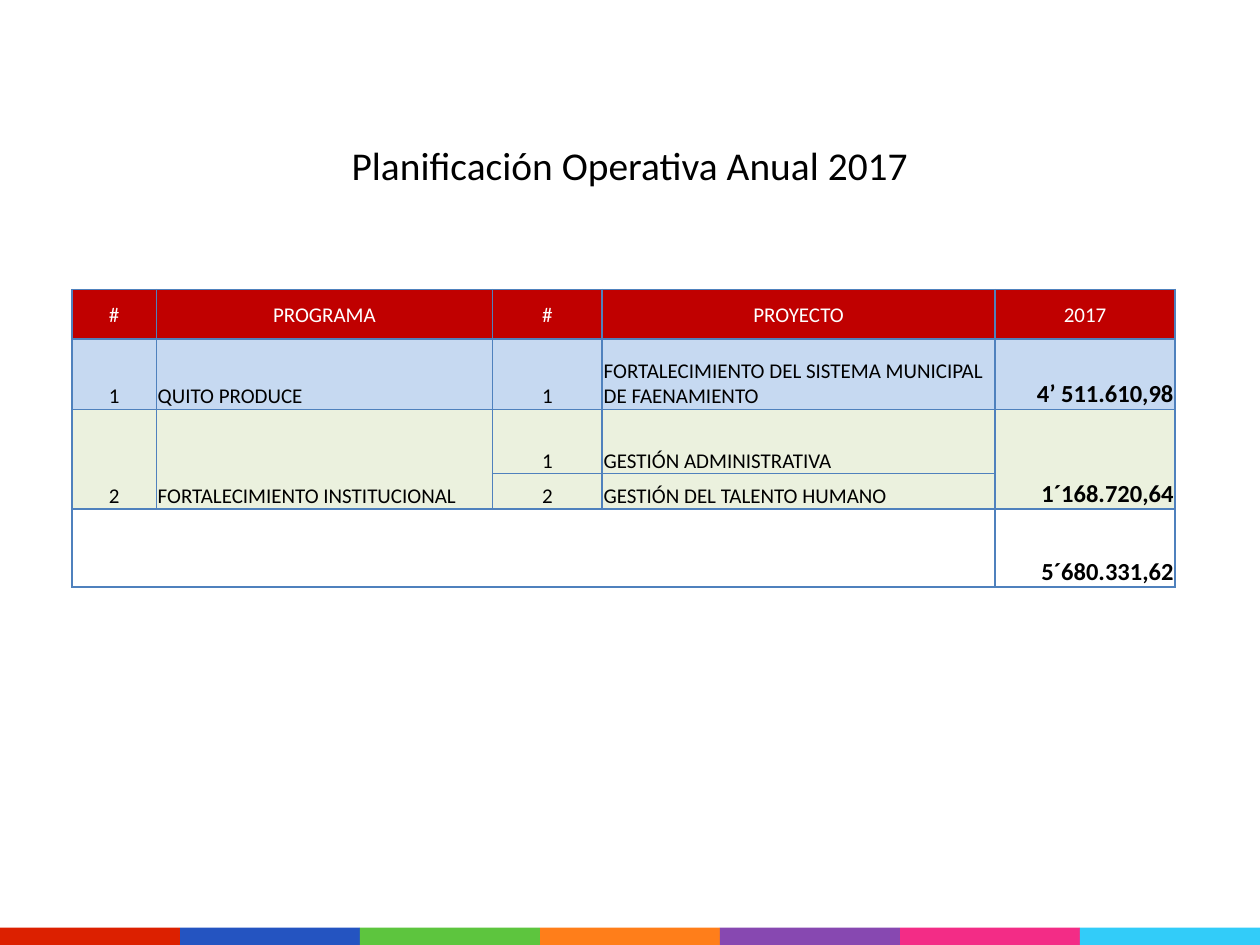
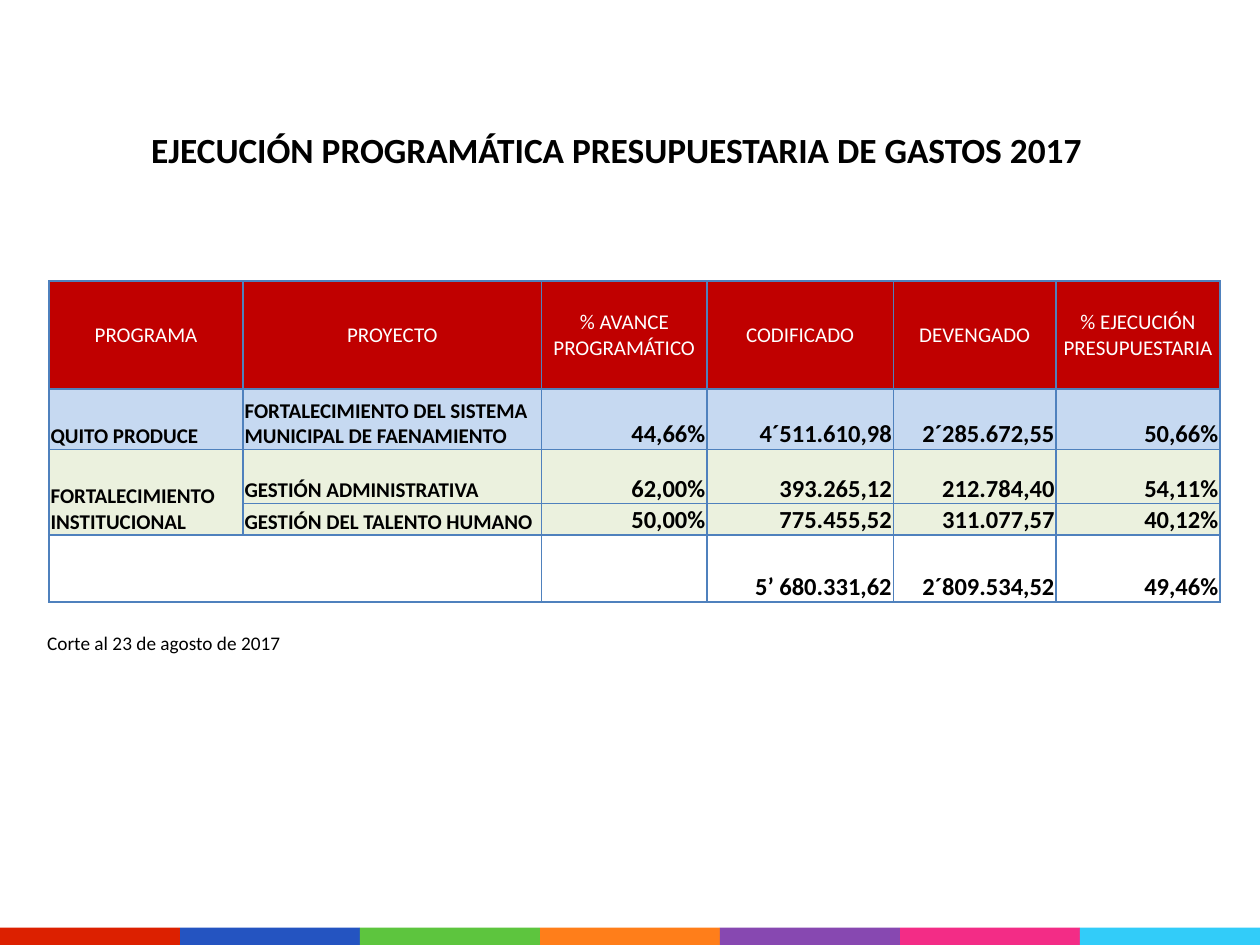
from lxml.etree import SubElement
from pptx import Presentation
from pptx.dml.color import RGBColor
from pptx.enum.shapes import MSO_SHAPE
from pptx.enum.text import MSO_ANCHOR, PP_ALIGN
from pptx.oxml.ns import qn
from pptx.util import Cm, Pt

SLIDE_WIDTH, SLIDE_HEIGHT = 25.4, 19.05
BAND_TOP, BAND_HEIGHT = 18.7, 0.56
BAND_COLOURS = ["DC2000", "2454C1", "5DC53E", "FF7E1A", "8748B1", "F32C86", "32CCF9"]
FONT = "Calibri"
BLACK, WHITE, BORDER = "000000", "FFFFFF", "4F81BD"
HEADER_FILL = "C00000"
PRODUCE_FILL, INSTITUTIONAL_FILL = "C6D9F1", "EBF1DE"
ROW_FILLS = [HEADER_FILL, PRODUCE_FILL, INSTITUTIONAL_FILL, INSTITUTIONAL_FILL, None]

CELL_FORMAT = {
    "margin_left": Cm(0.03),
    "margin_right": Cm(0.03),
    "margin_top": Cm(0.03),
    "margin_bottom": 0,
}
PLAIN_TABLE = {"first_row": False, "horz_banding": False}
HEADING = {"size": 12, "bold": False, "align": PP_ALIGN.CENTER, "hue": WHITE}
INDEX = {"size": 12, "bold": False, "align": PP_ALIGN.CENTER}
LABEL = {"size": 12, "bold": False, "align": PP_ALIGN.LEFT}
BOLD_LABEL = {**LABEL, "bold": True}
AMOUNT = {"size": 14, "bold": True, "align": PP_ALIGN.RIGHT}

PLAN = {
    "place": (1.45, 5.84),
    "widths": [1.7, 6.78, 2.21, 7.92, 3.63],
    "heights": [0.99, 1.42, 1.3, 0.71, 1.57],
    "styles": [INDEX, LABEL, INDEX, LABEL, AMOUNT],
    "rows": [
        ["#", "PROGRAMA", "#", "PROYECTO", "2017"],
        ["1", "QUITO PRODUCE", "1",
         "FORTALECIMIENTO DEL SISTEMA MUNICIPAL DE FAENAMIENTO", "4’ 511.610,98"],
        ["2", "FORTALECIMIENTO INSTITUCIONAL", "1", "GESTIÓN ADMINISTRATIVA", "1´168.720,64"],
        ["", "", "2", "GESTIÓN DEL TALENTO HUMANO", ""],
        ["", "", "", "", "5´680.331,62"],
    ],
    "merges": [((2, 0), (3, 0)), ((2, 1), (3, 1)), ((2, 4), (3, 4)), ((4, 0), (4, 3))],
}
EXECUTION = {
    "place": (0.99, 5.66),
    "widths": [3.91, 6.02, 3.33, 3.76, 3.28, 3.3],
    "heights": [2.18, 1.22, 1.09, 0.61, 1.35],
    "styles": [BOLD_LABEL] * 2 + [AMOUNT] * 4,
    "rows": [
        ["PROGRAMA", "PROYECTO", "% AVANCE PROGRAMÁTICO", "CODIFICADO", "DEVENGADO",
         "% EJECUCIÓN PRESUPUESTARIA"],
        ["QUITO PRODUCE", "FORTALECIMIENTO DEL SISTEMA MUNICIPAL DE FAENAMIENTO",
         "44,66%", "4´511.610,98", "2´285.672,55", "50,66%"],
        ["FORTALECIMIENTO INSTITUCIONAL", "GESTIÓN ADMINISTRATIVA",
         "62,00%", "393.265,12", "212.784,40", "54,11%"],
        ["", "GESTIÓN DEL TALENTO HUMANO", "50,00%", "775.455,52", "311.077,57", "40,12%"],
        ["", "", "", "5’ 680.331,62", "2´809.534,52", "49,46%"],
    ],
    "merges": [((2, 0), (3, 0)), ((4, 0), (4, 1))],
}


def colour(hex_value):
    return RGBColor.from_string(hex_value)


def apply_format(target, values):
    for name, value in values.items():
        setattr(target, name, value)


def write(frame, text, size, bold=False, align=PP_ALIGN.LEFT, hue=BLACK):
    paragraph = frame.paragraphs[0]
    paragraph.alignment = align
    run = paragraph.add_run()
    run.text = text
    apply_format(run.font, {"name": FONT, "size": Pt(size), "bold": bold})
    run.font.color.rgb = colour(hue)


def add_bands(slide):
    width = SLIDE_WIDTH / len(BAND_COLOURS)
    for position, hue in enumerate(BAND_COLOURS):
        band = slide.shapes.add_shape(
            MSO_SHAPE.RECTANGLE, Cm(position * width), Cm(BAND_TOP), Cm(width), Cm(BAND_HEIGHT))
        band.shadow.inherit = False
        band.fill.solid()
        band.fill.fore_color.rgb = colour(hue)
        band.line.fill.background()


def add_titled_slide(deck, text, box, size, bold, anchor):
    slide = deck.slides.add_slide(deck.slide_layouts[5])
    add_bands(slide)
    title = slide.shapes.title
    apply_format(title, dict(zip(("left", "top", "width", "height"), map(Cm, box))))
    apply_format(title.text_frame, {"word_wrap": True, "vertical_anchor": anchor})
    write(title.text_frame, text, size, bold, PP_ALIGN.CENTER)
    return slide


def add_borders(cell):
    properties = cell._tc.get_or_add_tcPr()
    for side in ("lnL", "lnR", "lnT", "lnB"):
        edge = SubElement(properties, qn(f"a:{side}"), w=str(Pt(1)))
        fill = SubElement(edge, qn("a:solidFill"))
        SubElement(fill, qn("a:srgbClr"), val=BORDER)


def format_cell(cell, text, style, fill, anchor):
    apply_format(cell, {**CELL_FORMAT, "vertical_anchor": anchor})
    write(cell.text_frame, text, **style)
    add_borders(cell)
    if fill:
        cell.fill.solid()
        cell.fill.fore_color.rgb = colour(fill)
    else:
        cell.fill.background()


def add_budget_table(slide, content):
    widths, heights = content["widths"], content["heights"]
    left, top = content["place"]
    table = slide.shapes.add_table(
        len(heights), len(widths), Cm(left), Cm(top), Cm(sum(widths)), Cm(sum(heights))).table
    apply_format(table, PLAIN_TABLE)
    for column, width in zip(table.columns, widths):
        column.width = Cm(width)
    for row, height in zip(table.rows, heights):
        row.height = Cm(height)
    for row_number, (texts, fill) in enumerate(zip(content["rows"], ROW_FILLS)):
        heading = row_number == 0
        anchor = MSO_ANCHOR.MIDDLE if heading else MSO_ANCHOR.BOTTOM
        for column_number, (text, style) in enumerate(zip(texts, content["styles"])):
            format_cell(table.cell(row_number, column_number), text,
                        HEADING if heading else style, fill, anchor)
    for first, last in content["merges"]:
        table.cell(*first).merge(table.cell(*last))


def add_cutoff_note(slide, text):
    note = slide.shapes.add_textbox(Cm(0.7), Cm(12.6), Cm(5.26), Cm(0.74))
    note.text_frame.word_wrap = False
    write(note.text_frame, text, 11)


def main():
    deck = Presentation()
    apply_format(deck, {"slide_width": Cm(SLIDE_WIDTH), "slide_height": Cm(SLIDE_HEIGHT)})

    plan = add_titled_slide(deck, "Planificación Operativa Anual 2017",
                            (1.27, 1.73, 22.86, 3.18), 22.5, False, MSO_ANCHOR.MIDDLE)
    add_budget_table(plan, PLAN)

    execution = add_titled_slide(deck, "EJECUCIÓN PROGRAMÁTICA PRESUPUESTARIA DE GASTOS 2017",
                                 (1.75, 2.46, 21.34, 3.2), 20.2, True, MSO_ANCHOR.TOP)
    add_budget_table(execution, EXECUTION)
    add_cutoff_note(execution, "Corte al 23 de agosto de 2017")

    deck.save("out.pptx")


if __name__ == "__main__":
    main()
